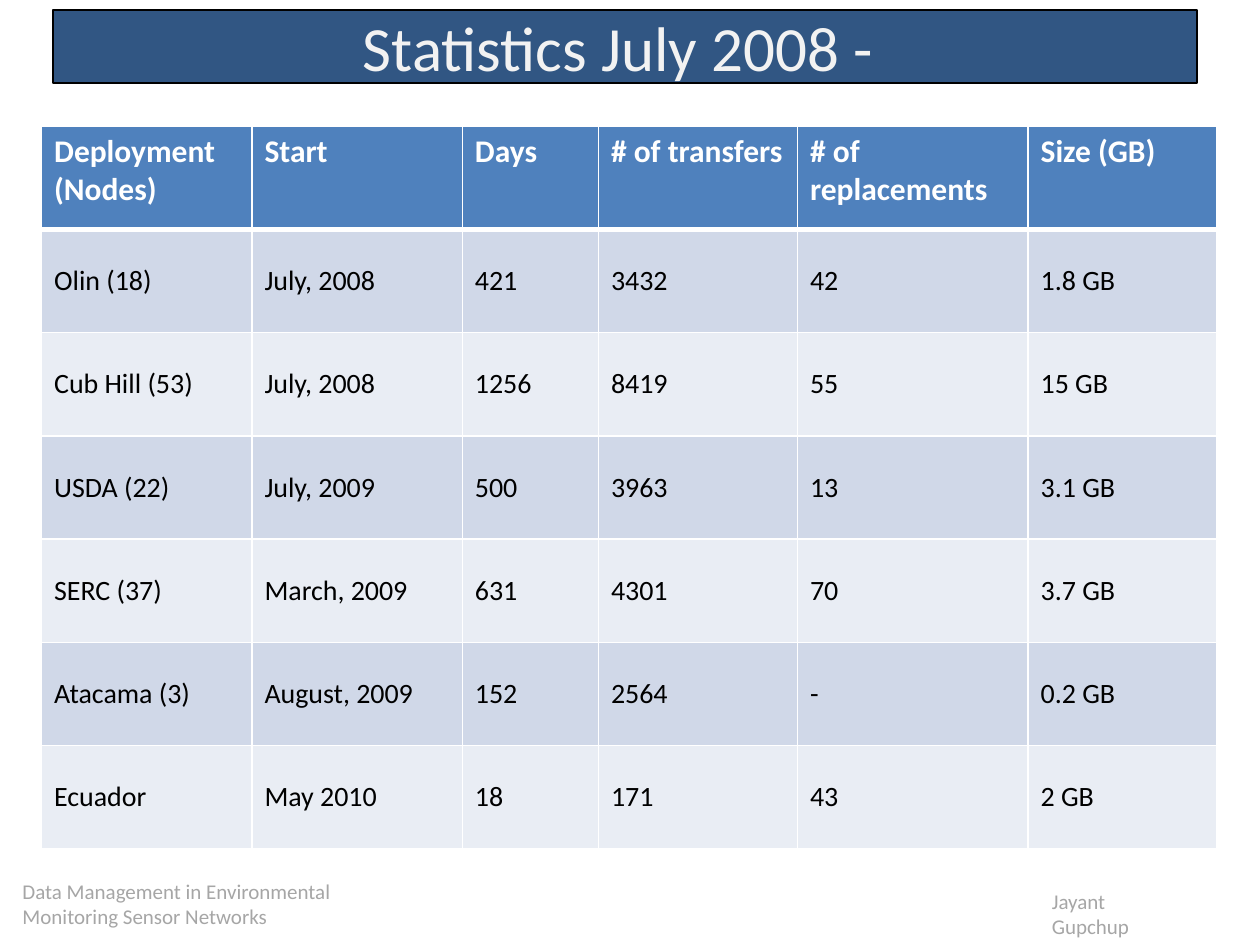
from dataclasses import dataclass

from lxml.etree import SubElement
from pptx import Presentation
from pptx.dml.color import RGBColor
from pptx.enum.shapes import MSO_SHAPE
from pptx.enum.text import MSO_ANCHOR, PP_ALIGN
from pptx.oxml.ns import qn
from pptx.util import Inches, Pt


@dataclass(frozen=True)
class Theme:
    font: str = "Calibri"
    title_fill: str = "315683"
    title_line: str = "000000"
    header_fill: str = "4F81BD"
    bands: tuple = ("D0D8E8", "E9EDF4")
    border: str = "FFFFFF"
    title_text: tuple = (36, "F2F2F2")
    header_text: tuple = (18, "FFFFFF")
    body_text: tuple = (16, "000000")
    footer_text: tuple = (12, "A6A6A6")


THEME = Theme()

COLUMN_WIDTHS = (1.67, 1.67, 1.08, 1.58, 1.83, 1.5)
ROW_HEIGHT = 0.82
STATISTICS = (
    ("Deployment (Nodes)", "Start", "Days", "# of transfers", "# of replacements", "Size (GB)"),
    ("Olin (18)", "July, 2008", "421", "3432", "42", "1.8 GB"),
    ("Cub Hill (53)", "July, 2008", "1256", "8419", "55", "15 GB"),
    ("USDA (22)", "July, 2009", "500", "3963", "13", "3.1 GB"),
    ("SERC (37)", "March, 2009", "631", "4301", "70", "3.7 GB"),
    ("Atacama (3)", "August, 2009", "152", "2564", "-", "0.2 GB"),
    ("Ecuador", "May 2010", "18", "171", "43", "2 GB"),
)


def write_text(text_frame, lines, style, bold=False, alignment=PP_ALIGN.LEFT):
    size, color = style
    font_values = {"name": THEME.font, "size": Pt(size), "bold": bold}
    text_frame.text = "\n".join(lines)
    for paragraph in text_frame.paragraphs:
        paragraph.alignment = alignment
        for run in paragraph.runs:
            for name, value in font_values.items():
                setattr(run.font, name, value)
            run.font.color.rgb = RGBColor.from_string(color)


def fill_solid(target, color):
    target.fill.solid()
    target.fill.fore_color.rgb = RGBColor.from_string(color)


def add_title_bar(slide, box, text):
    shape = slide.shapes.add_shape(MSO_SHAPE.RECTANGLE, *box)
    shape.shadow.inherit = False
    fill_solid(shape, THEME.title_fill)
    shape.line.color.rgb = RGBColor.from_string(THEME.title_line)
    shape.line.width = Pt(1)
    shape.text_frame.vertical_anchor = MSO_ANCHOR.MIDDLE
    write_text(shape.text_frame, [text], THEME.title_text, alignment=PP_ALIGN.CENTER)


def add_cell_borders(cell, bottom_width):
    """Draw all four borders; call before the cell is filled."""
    properties = cell._tc.get_or_add_tcPr()
    for side, width in {"lnL": 1, "lnR": 1, "lnT": 1, "lnB": bottom_width}.items():
        line = SubElement(properties, qn(f"a:{side}"), w=str(Pt(width)))
        fill = SubElement(line, qn("a:solidFill"))
        SubElement(fill, qn("a:srgbClr"), val=THEME.border)


def add_statistics_table(slide, box, rows):
    table = slide.shapes.add_table(len(rows), len(rows[0]), *box).table
    for column, width in zip(table.columns, COLUMN_WIDTHS):
        column.width = Inches(width)
    for row_index, values in enumerate(rows):
        is_header = row_index == 0
        table.rows[row_index].height = Inches(ROW_HEIGHT)
        for column_index, value in enumerate(values):
            cell = table.cell(row_index, column_index)
            add_cell_borders(cell, 3 if is_header else 1)
            fill_solid(cell, THEME.header_fill if is_header else THEME.bands[(row_index - 1) % 2])
            cell.vertical_anchor = MSO_ANCHOR.TOP if is_header else MSO_ANCHOR.MIDDLE
            style = THEME.header_text if is_header else THEME.body_text
            write_text(cell.text_frame, [value], style, bold=is_header)


def add_footer(slide, box, lines):
    text_frame = slide.shapes.add_textbox(*box).text_frame
    text_frame.word_wrap = True
    write_text(text_frame, lines, THEME.footer_text)


def inch_box(*lengths):
    return tuple(Inches(length) for length in lengths)


def main():
    presentation = Presentation()
    presentation.slide_width, presentation.slide_height = inch_box(10, 7.5)
    slide = presentation.slides.add_slide(presentation.slide_layouts[6])

    add_footer(slide, inch_box(0.08, 6.92, 3.25, 0.5),
               ["Data Management in Environmental", "Monitoring Sensor Networks"])
    add_footer(slide, inch_box(8.25, 7, 1.2, 0.3), ["Jayant Gupchup"])
    add_title_bar(slide, inch_box(0.42, 0.08, 9.08, 0.58), "Statistics July 2008 - ")
    table_box = inch_box(0.33, 1, sum(COLUMN_WIDTHS), ROW_HEIGHT * len(STATISTICS))
    add_statistics_table(slide, table_box, STATISTICS)

    presentation.save("out.pptx")


if __name__ == "__main__":
    main()
